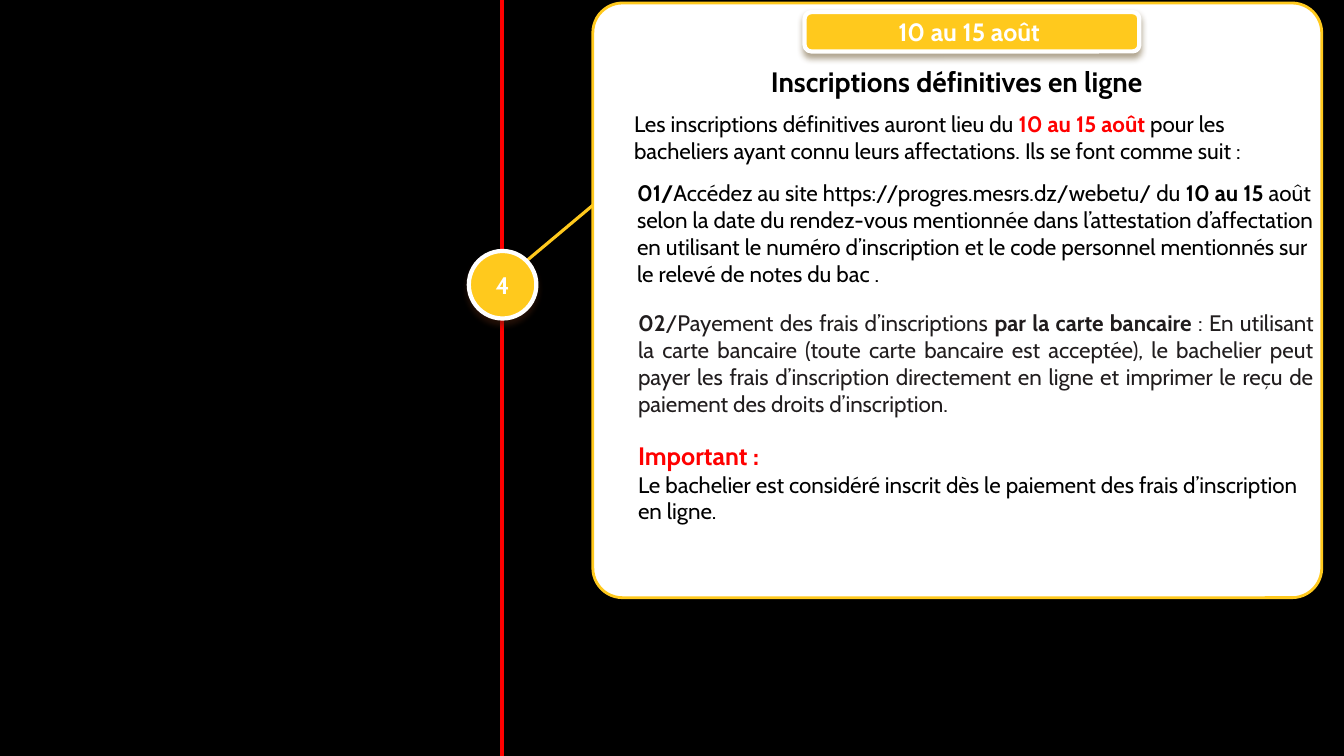
from dataclasses import dataclass

from lxml import etree
from pptx import Presentation
from pptx.dml.color import RGBColor
from pptx.enum.shapes import MSO_CONNECTOR, MSO_SHAPE
from pptx.enum.text import MSO_ANCHOR, MSO_AUTO_SIZE, PP_ALIGN
from pptx.oxml.ns import qn
from pptx.util import Inches, Pt

ROUND, OVAL = MSO_SHAPE.ROUNDED_RECTANGLE, MSO_SHAPE.OVAL
LEFT, CENTER, JUSTIFY = PP_ALIGN.LEFT, PP_ALIGN.CENTER, PP_ALIGN.JUSTIFY
TOP, MIDDLE = MSO_ANCHOR.TOP, MSO_ANCHOR.MIDDLE
STRAIGHT = MSO_CONNECTOR.STRAIGHT
GROW = MSO_AUTO_SIZE.SHAPE_TO_FIT_TEXT

BLACK = RGBColor(0x00, 0x00, 0x00)
WHITE = RGBColor(0xFF, 0xFF, 0xFF)
RED = RGBColor(0xFF, 0x00, 0x00)
GOLD = RGBColor(0xFF, 0xC9, 0x1D)
INK = RGBColor(0x21, 0x1D, 0x1E)
BROWN = RGBColor(0x59, 0x40, 0x12)
UMBER = RGBColor(0x4F, 0x25, 0x11)
FONT = "Cabin"


@dataclass
class Run:
    text: str
    bold: bool = False
    color: RGBColor | None = None


@dataclass
class Para:
    runs: list[Run]
    size: float = 16
    color: RGBColor = BLACK
    align: PP_ALIGN = LEFT


@dataclass
class Line:
    start: tuple[float, float]
    end: tuple[float, float]
    color: RGBColor
    width: float


@dataclass
class Badge:
    kind: MSO_SHAPE
    box: tuple[float, float, float, float]
    para: Para
    shade: RGBColor


@dataclass
class Note:
    box: tuple[float, float, float, float]
    paras: list[Para]


AXIS = 4.98
CARD = (5.88, 0.03, 7.23, 5.9)

LINES = [
    Line((AXIS, 2.49), (AXIS, 0), RED, 3),
    Line((5.22, 2.59), (6.15, 1.81), GOLD, 2.25),
    Line((AXIS, 3.16), (AXIS, 7.5), RED, 3),
]

BADGES = [
    Badge(ROUND, (7.98, 0.12, 3.32, 0.39),
          Para([Run("10 au 15 août ", True)], 17.9, WHITE, CENTER), BROWN),
    Badge(OVAL, (4.65, 2.49, 0.67, 0.67),
          Para([Run("4", True)], 17.1, WHITE, CENTER), UMBER),
]

TITLE = Note((5.99, 0.59, 7.06, 0.44), [
    Para([Run("Inscriptions définitives en ligne ", True)], 20, BLACK, CENTER)])

NOTES = [
    Note((6.19, 1.04, 6.93, 0.64), [Para([
        Run("Les inscriptions définitives auront lieu du "),
        Run("10 au 15 août ", True, RED),
        Run("pour les bacheliers ayant connu leurs affectations. "
            "Ils se font comme suit :")])]),
    Note((6.22, 1.73, 6.91, 1.18), [Para([
        Run("01/", True),
        Run("Accédez au site https://progres.mesrs.dz/webetu/ du "),
        Run("10 au 15 ", True),
        Run("août selon la date du rendez-vous mentionnée dans l’attestation "
            "d’affectation en utilisant le numéro d’inscription et le code "
            "personnel mentionnés sur le relevé de notes du bac .")])]),
    Note((6.23, 3.02, 6.9, 1.18), [Para([
        Run("02", True),
        Run("/Payement des frais d’inscriptions "),
        Run("par la carte bancaire ", True),
        Run(": En utilisant la carte bancaire (toute carte bancaire est "
            "acceptée), le bachelier peut payer les frais d’inscription "
            "directement en ligne et imprimer le reçu de paiement des droits "
            "d’inscription. ")], color=INK, align=JUSTIFY)]),
    Note((6.23, 4.32, 6.9, 0.94), [
        Para([Run("Important :", True)], 18, RED),
        Para([Run("Le bachelier est considéré inscrit dès le paiement des "
                  "frais d’inscription en ligne.")])]),
]


def write(frame, paras: list[Para], anchor: MSO_ANCHOR = TOP) -> None:
    frame.word_wrap = True
    frame.vertical_anchor = anchor
    for i, item in enumerate(paras):
        para = frame.add_paragraph() if i else frame.paragraphs[0]
        para.alignment = item.align
        font = para.font
        font.name, font.size = FONT, Pt(item.size)
        font.color.rgb = item.color
        for part in item.runs:
            run = para.add_run()
            run.text = part.text
            run.font.bold = part.bold
            if part.color is not None:
                run.font.color.rgb = part.color


def draw_line(shapes, line: Line) -> None:
    ends = [Inches(v) for v in (*line.start, *line.end)]
    link = shapes.add_connector(STRAIGHT, *ends)
    link.line.color.rgb = line.color
    link.line.width = Pt(line.width)
    etree.SubElement(link.element.spPr, qn("a:effectLst"))


def add_form(shapes, kind: MSO_SHAPE, box: tuple, fill: RGBColor,
             edge: RGBColor, width: float):
    form = shapes.add_shape(kind, *map(Inches, box))
    form.fill.solid()
    form.fill.fore_color.rgb = fill
    form.line.color.rgb = edge
    form.line.width = Pt(width)
    form.shadow.inherit = False
    return form


def add_shade(form, color: RGBColor) -> None:
    list_ = form.element.spPr.find(qn("a:effectLst"))
    shade = etree.SubElement(
        list_, qn("a:outerShdw"), blurRad=str(Pt(4.5)), dist=str(Pt(3)),
        dir="5400000", rotWithShape="0")
    tint = etree.SubElement(shade, qn("a:srgbClr"), val=str(color))
    etree.SubElement(tint, qn("a:alpha"), val="48000")


def draw_badge(shapes, badge: Badge) -> None:
    form = add_form(shapes, badge.kind, badge.box, GOLD, WHITE, 3)
    add_shade(form, badge.shade)
    write(form.text_frame, [badge.para], MIDDLE)


def draw_note(shapes, note: Note) -> None:
    box = shapes.add_textbox(*map(Inches, note.box))
    write(box.text_frame, note.paras)
    box.text_frame.auto_size = GROW


def draw_title(shapes, note: Note) -> None:
    title = shapes.title
    title.left, title.top, title.width, title.height = map(Inches, note.box)
    write(title.text_frame, note.paras)
    title.text_frame.auto_size = GROW
    shapes.element.append(title.element)


def main() -> None:
    deck = Presentation()
    deck.slide_width, deck.slide_height = Inches(13.33), Inches(7.5)
    slide = deck.slides.add_slide(deck.slide_layouts[5])
    back = slide.background.fill
    back.solid()
    back.fore_color.rgb = BLACK
    shapes = slide.shapes
    for line in LINES:
        draw_line(shapes, line)
    card = add_form(shapes, ROUND, CARD, WHITE, GOLD, 2)
    card.adjustments[0] = 0.05
    for badge in BADGES:
        draw_badge(shapes, badge)
    draw_title(shapes, TITLE)
    for note in NOTES:
        draw_note(shapes, note)
    deck.save("out.pptx")


if __name__ == "__main__":
    main()
